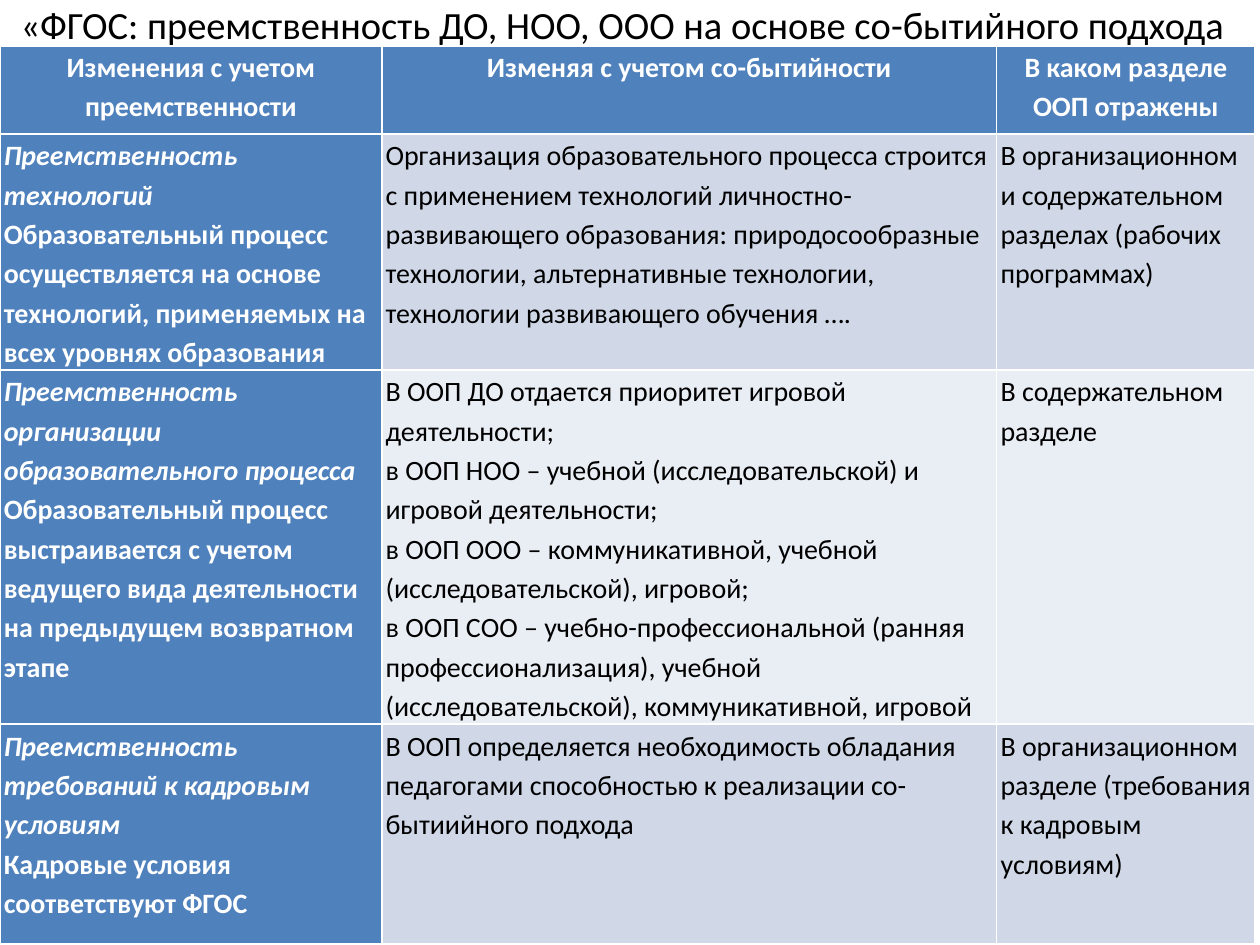
from pptx import Presentation
from pptx.dml.color import RGBColor
from pptx.enum.text import MSO_ANCHOR, PP_ALIGN
from pptx.util import Pt

CENTER, LEFT = PP_ALIGN.CENTER, PP_ALIGN.LEFT
MIDDLE = MSO_ANCHOR.MIDDLE
TITLE_ONLY = 5

BLUE, WHITE, BLACK = "4F81BD", "FFFFFF", "000000"
BANDS = ["D0D8E8", "E9EDF4"]

TITLE = "«ФГОС: преемственность ДО, НОО, ООО на основе со-бытийного подхода"
COLS = [218.2, 351.4, 147.6]
ROWS = [50.4, 128.9, 200.2, 125.3]
HEAD = [
    "Изменения с учетом преемственности",
    "Изменяя с учетом со-бытийности",
    "В каком разделе ООП отражены",
]
# Each cell is a list of paragraphs; the last one in the first column is upright
BODY = [
    [
        ["Преемственность технологий",
         "Образовательный процесс осуществляется на основе технологий, "
         "применяемых на всех уровнях образования"],
        ["Организация образовательного процесса строится с применением "
         "технологий личностно-развивающего образования: природосообразные "
         "технологии, альтернативные технологии, технологии развивающего "
         "обучения …."],
        ["В организационном и содержательном разделах (рабочих программах)"],
    ],
    [
        ["Преемственность",
         "организации образовательного процесса",
         "Образовательный процесс выстраивается с учетом ведущего вида "
         "деятельности на предыдущем возвратном этапе"],
        ["В ООП ДО отдается приоритет игровой деятельности;",
         "в ООП НОО – учебной (исследовательской) и игровой деятельности;",
         "в ООП ООО – коммуникативной, учебной (исследовательской), игровой;",
         "в ООП СОО – учебно-профессиональной (ранняя профессионализация), "
         "учебной (исследовательской), коммуникативной, игровой"],
        ["В содержательном разделе"],
    ],
    [
        ["Преемственность требований к кадровым условиям",
         "Кадровые условия соответствуют ФГОС"],
        ["В ООП определяется необходимость обладания педагогами "
         "способностью к реализации со-бытиийного подхода"],
        ["В организационном разделе (требования к кадровым условиям)"],
    ],
]


def color(code):
    return RGBColor.from_string(code)


class Deck:
    face = "Calibri"
    size = 16
    space = 1.15

    def __init__(self, wide, high):
        self.show = Presentation()
        self.show.slide_width, self.show.slide_height = Pt(wide), Pt(high)
        self.slide = self.show.slides.add_slide(
            self.show.slide_layouts[TITLE_ONLY])

    def style(self, par, size, ink, bold=False, slant=False):
        for run in par.runs:
            font = run.font
            font.name, font.size = self.face, Pt(size)
            font.bold, font.italic = bold, slant
            font.color.rgb = color(ink)

    def title(self, text, left, top, wide, high, size):
        box = self.slide.shapes.title
        box.left, box.top = Pt(left), Pt(top)
        box.width, box.height = Pt(wide), Pt(high)
        frame = box.text_frame
        frame.text = text
        frame.vertical_anchor = MIDDLE
        par = frame.paragraphs[0]
        par.alignment = CENTER
        self.style(par, size, BLACK)

    def cell(self, cell, texts, fill, ink, bold, align, slant=False):
        cell.fill.solid()
        cell.fill.fore_color.rgb = color(fill)
        cell.margin_left = cell.margin_right = Pt(2.2)
        cell.margin_top = cell.margin_bottom = 0
        frame = cell.text_frame
        frame.text = "\n".join(texts)
        for spot, par in enumerate(frame.paragraphs, 1):
            par.alignment = align
            par.line_spacing = self.space
            self.style(par, self.size, ink, bold, slant and spot < len(texts))

    def table(self, left, top, cols, rows, head, body):
        grid = self.slide.shapes.add_table(
            len(rows), len(cols), Pt(left), Pt(top),
            Pt(sum(cols)), Pt(sum(rows))).table
        grid.first_col = True
        for col, wide in zip(grid.columns, cols):
            col.width = Pt(wide)
        for row, high in zip(grid.rows, rows):
            row.height = Pt(high)
        # Header row
        for c, text in enumerate(head):
            self.cell(grid.cell(0, c), [text], BLUE, WHITE, True, CENTER)
        # Blue first column, banded rows beside it
        for r, line in enumerate(body):
            band = BANDS[r % len(BANDS)]
            for c, texts in enumerate(line):
                first = c == 0
                self.cell(grid.cell(r + 1, c), texts,
                          BLUE if first else band,
                          WHITE if first else BLACK, first, LEFT, first)


def main():
    deck = Deck(720, 540)
    deck.title(TITLE, 0, 0, 711.4, 28, 22)
    deck.table(0, 26.2, COLS, ROWS, HEAD, BODY)
    deck.show.save("out.pptx")


if __name__ == "__main__":
    main()
